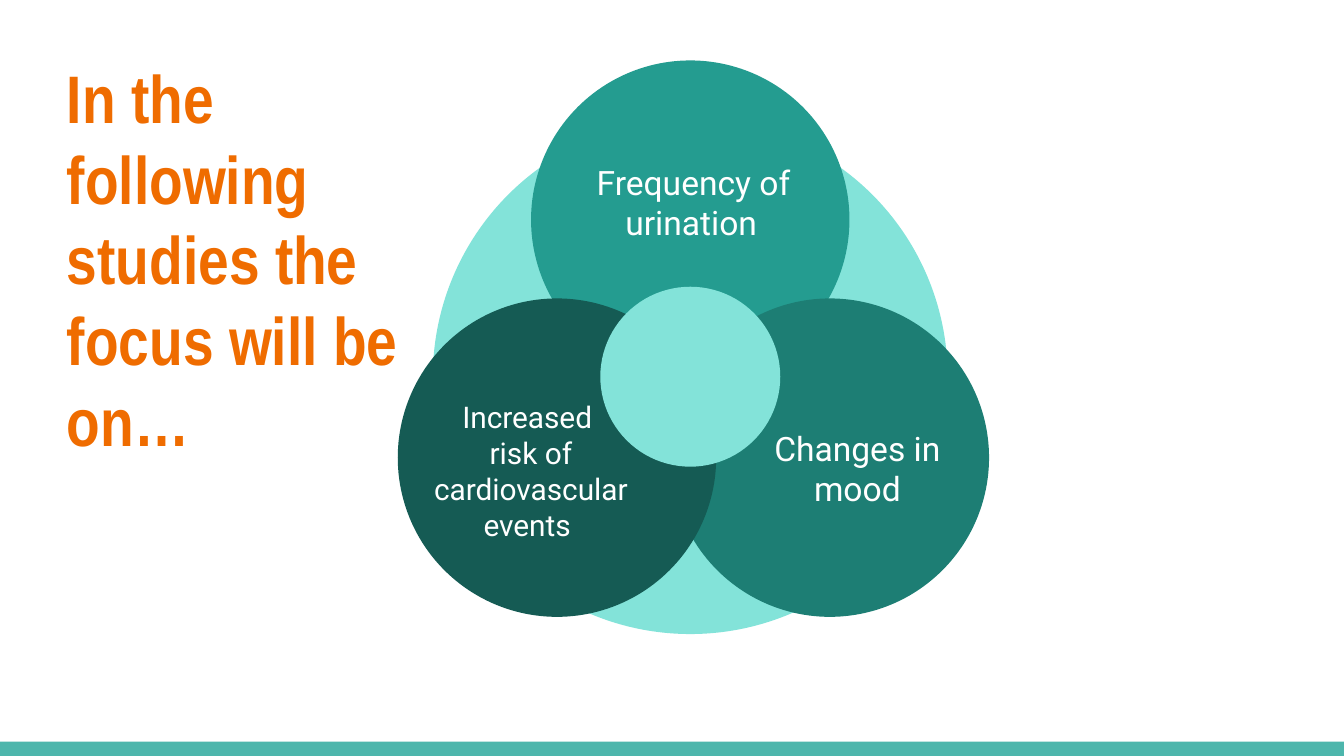
from pptx import Presentation
from pptx.dml.color import RGBColor
from pptx.enum.shapes import MSO_SHAPE
from pptx.enum.text import MSO_ANCHOR, PP_ALIGN
from pptx.util import Pt

RECTANGLE, OVAL = MSO_SHAPE.RECTANGLE, MSO_SHAPE.OVAL
TOP, MIDDLE = MSO_ANCHOR.TOP, MSO_ANCHOR.MIDDLE
LEFT, CENTER = PP_ALIGN.LEFT, PP_ALIGN.CENTER

COLORS = {
    "white": "FFFFFF",
    "title": "EF6C00",
    "bar": "4DB6AC",
    "light": "83E3D9",
    "teal": "249C90",
    "medium": "1D7E74",
    "dark": "155B54",
}
SLIDE_WIDTH, SLIDE_HEIGHT = 720, 405
BAR_HEIGHT = 7.6
MIDDLE_X, MIDDLE_Y = 369.8, 201.8
PETAL_RADIUS = 85.3

PETALS = [
    ("teal", (MIDDLE_X, 117.7), (312.5, 80.6, 118, 55.4),
     [[("Frequency of urination", 18), (" ", 10)]]),
    ("medium", (444.6, 245.2), (400.3, 223.2, 118, 55.4),
     [[("Changes in mood", 18)]]),
    ("dark", (298.4, 245.2), (223.9, 214.6, 121, 74.9),
     [[("Increased ", 16)], [("risk of cardiovascular events ", 16)]]),
]


class SlideBuilder:
    title_font = "Arial Narrow"
    body_font = "Roboto"
    inset = Pt(7.2)

    def __init__(self, slide):
        self.slide = slide

    def shape(self, kind, left, top, width, height, color):
        shape = self.slide.shapes.add_shape(
            kind, Pt(left), Pt(top), Pt(width), Pt(height))
        shape.shadow.inherit = False
        shape.fill.solid()
        shape.fill.fore_color.rgb = RGBColor.from_string(COLORS[color])
        shape.line.fill.background()

    def circle(self, center, radius, color):
        x, y = center
        self.shape(OVAL, x - radius, y - radius, 2 * radius, 2 * radius, color)

    def text(self, box, paragraphs, color="white", font=body_font,
             bold=False, alignment=CENTER, anchor=MIDDLE):
        frame = self.slide.shapes.add_textbox(*map(Pt, box)).text_frame
        frame.word_wrap = True
        frame.vertical_anchor = anchor
        frame.margin_left = frame.margin_right = self.inset
        frame.margin_top = frame.margin_bottom = self.inset
        for index, runs in enumerate(paragraphs):
            paragraph = frame.add_paragraph() if index else frame.paragraphs[0]
            paragraph.alignment = alignment
            for words, size in runs:
                run = paragraph.add_run()
                run.text = words
                run.font.name = font
                run.font.size = Pt(size)
                run.font.bold = bold
                run.font.color.rgb = RGBColor.from_string(COLORS[color])


def main():
    presentation = Presentation()
    presentation.slide_width = Pt(SLIDE_WIDTH)
    presentation.slide_height = Pt(SLIDE_HEIGHT)
    slide = presentation.slides.add_slide(presentation.slide_layouts[6])
    builder = SlideBuilder(slide)

    builder.shape(RECTANGLE, 0, SLIDE_HEIGHT - BAR_HEIGHT,
                  SLIDE_WIDTH, BAR_HEIGHT, "bar")
    builder.text((28.8, 23, 220.3, 55.4),
                 [[("In the following studies the focus will be on…", 36)]],
                 "title", builder.title_font, True, LEFT, TOP)

    builder.circle((MIDDLE_X, MIDDLE_Y), 137.9, "light")
    for color, center, box, paragraphs in PETALS:
        builder.circle(center, PETAL_RADIUS, color)
        builder.text(box, paragraphs)
    builder.circle((MIDDLE_X, MIDDLE_Y), 48.2, "light")

    presentation.save("out.pptx")


if __name__ == "__main__":
    main()
